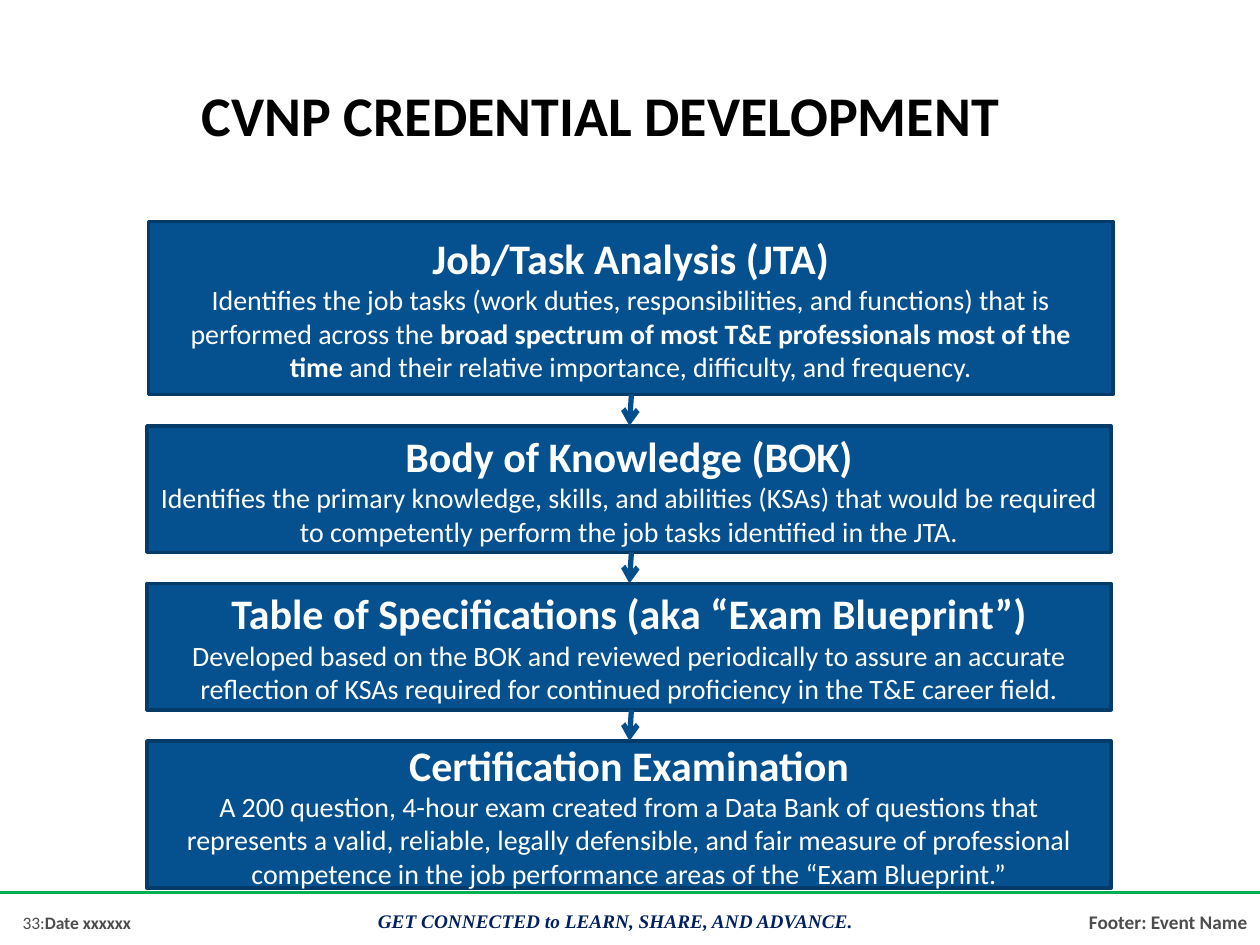
from lxml import etree
from pptx import Presentation
from pptx import util as u
from pptx.dml.color import RGBColor
from pptx.enum import shapes, text
from pptx.oxml.ns import qn

THEME = {
    "font": "Calibri", "motto_font": "Times New Roman",
    "black": "000000", "white": "FFFFFF", "gray": "4D4D4D", "navy": "002060",
    "green": "00B050", "box": "05508E", "box_line": "043B69", "arrow": "024F8E",
    "title": 32, "heading": 24, "body": 16, "footer": 11, "date": 10,
}


def add_run(paragraph, words, size, color, **formats):
    run = paragraph.add_run()
    run.text = words
    values = {"name": THEME["font"], "size": u.Pt(THEME[size]), "bold": False, **formats}
    for name, value in values.items():
        setattr(run.font, name, value)
    run.font.color.rgb = RGBColor.from_string(THEME[color])


def add_line(slide, start, end, color, width):
    line = slide.shapes.add_connector(
        shapes.MSO_CONNECTOR.STRAIGHT, *(u.Pt(value) for value in start + end))
    line.line.color.rgb = RGBColor.from_string(THEME[color])
    line.line.width = u.Pt(width)
    properties = line._element.spPr
    etree.SubElement(properties, qn("a:effectLst"))
    return properties.find(qn("a:ln"))


presentation = Presentation()
presentation.slide_width, presentation.slide_height = u.Pt(720), u.Pt(540)
slide = presentation.slides.add_slide(presentation.slide_layouts[5])

# Footer: event, page and date, motto
footers = [
    ((509.8, 516.2, 210.2, 20.9), "RIGHT", "MIDDLE",
     [("Footer: Event Name", "footer", "gray", {"bold": True})]),
    ((5.8, 517.7, 167.8, 19.4), "LEFT", "TOP",
     [("33:", "date", "gray", {}), ("Date xxxxxx", "date", "gray", {"bold": True})]),
    ((208.8, 516.2, 306, 20.9), "LEFT", "TOP",
     [("GET CONNECTED to LEARN, SHARE, AND ADVANCE.", "footer", "navy",
       {"name": THEME["motto_font"], "bold": True, "italic": True})]),
]
for place, align, anchor, runs in footers:
    frame = slide.shapes.add_textbox(*(u.Pt(value) for value in place)).text_frame
    frame.word_wrap = True
    frame.vertical_anchor = text.MSO_ANCHOR[anchor]
    paragraph = frame.paragraphs[0]
    paragraph.alignment = text.PP_ALIGN[align]
    for words, size, color, formats in runs:
        add_run(paragraph, words, size, color, **formats)
add_line(slide, (0, 510), (720, 510), "green", 2)

# Title
title = slide.shapes.title
for name, value in {"left": 108, "top": 30.2, "width": 581.8, "height": 69.8}.items():
    setattr(title, name, u.Pt(value))
title.text_frame.vertical_anchor = text.MSO_ANCHOR.MIDDLE
title.text_frame.paragraphs[0].alignment = text.PP_ALIGN.LEFT
add_run(title.text_frame.paragraphs[0], "CVNP CREDENTIAL DEVELOPMENT",
        "title", "black", bold=True)

# Steps: left, top, height, heading, then (words, bold) pieces
steps = [
    (85, 126.6, 98.8, "Job/Task Analysis (JTA)", [
        ("Identifies the job tasks (work duties, responsibilities, and functions) "
         "that is performed across the ", False),
        ("broad spectrum of most T&E professionals most of the time ", True),
        ("and their relative importance, difficulty, and frequency.", False)]),
    (84, 243.4, 72.2, "Body of Knowledge (BOK)", [
        ("Identifies the primary knowledge, skills, and abilities (KSAs) that would be "
         "required to competently perform the job tasks identified in the JTA.", False)]),
    (84, 333.4, 72.2, "Table of Specifications (aka “Exam Blueprint”)", [
        ("Developed based on the BOK and reviewed periodically to assure an accurate "
         "reflection of KSAs required for continued proficiency in the T&E career field.",
         False)]),
    (84, 423.4, 84.2, "Certification Examination", [
        ("A 200 question, 4-hour exam created from a Data Bank of questions that "
         "represents a valid, reliable, legally defensible, and fair measure of "
         "professional competence in the job performance areas of the “Exam Blueprint.”",
         False)]),
]
for left, top, height, heading, pieces in steps:
    box = slide.shapes.add_shape(shapes.MSO_SHAPE.RECTANGLE, u.Pt(left), u.Pt(top),
                                 u.Pt(551), u.Pt(height))
    box.shadow.inherit = False
    box.fill.solid()
    box.fill.fore_color.rgb = RGBColor.from_string(THEME["box"])
    box.line.color.rgb = RGBColor.from_string(THEME["box_line"])
    box.line.width = u.Pt(2)
    frame = box.text_frame
    frame.word_wrap = True
    frame.vertical_anchor = text.MSO_ANCHOR.MIDDLE
    add_run(frame.paragraphs[0], heading, "heading", "white", bold=True)
    body = frame.add_paragraph()
    for words, bold in pieces:
        add_run(body, words, "body", "white", bold=bold)
    for paragraph in frame.paragraphs:
        paragraph.alignment = text.PP_ALIGN.CENTER

# Arrows from each step to the next
for (_, top, height, *_), (_, next_top, *_) in zip(steps, steps[1:]):
    outline = add_line(slide, (360.8, top + height), (359.7, next_top), "arrow", 3)
    etree.SubElement(outline, qn("a:tailEnd"), type="arrow")

presentation.save("out.pptx")
